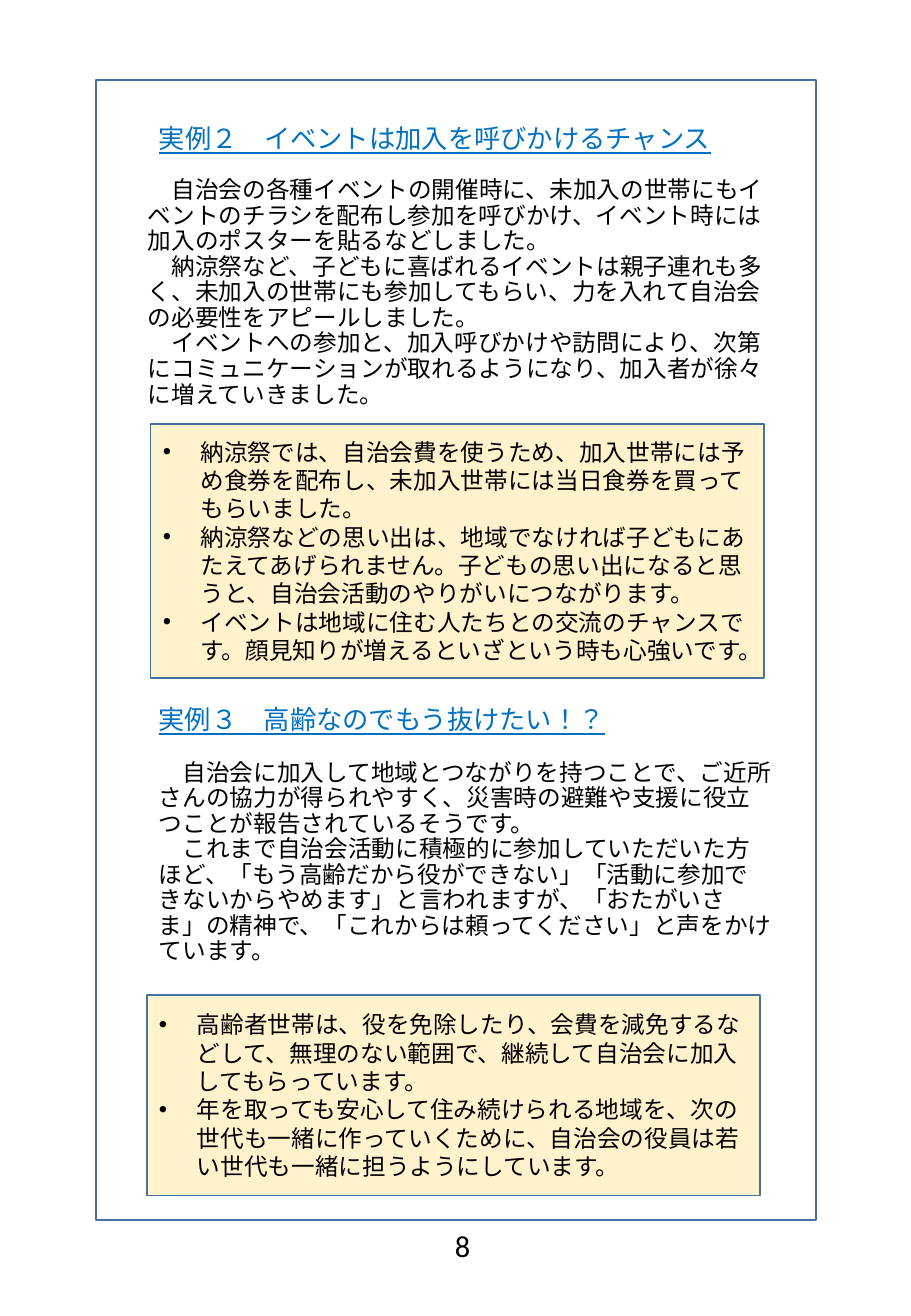
"""Build page 8: two neighbourhood association case studies."""
from lxml.etree import SubElement as Sub
from pptx import Presentation as Deck
from pptx.dml.color import RGBColor as Rgb
from pptx.enum.lang import MSO_LANGUAGE_ID as Lang
from pptx.enum.shapes import MSO_SHAPE as Kind
from pptx.enum.text import MSO_ANCHOR as Anchor, MSO_AUTO_SIZE as Fit, PP_ALIGN as Align
from pptx.oxml.ns import qn
from pptx.util import Cm, Pt

WHITE = Rgb(0xFF, 0xFF, 0xFF)
CREAM = Rgb(0xFF, 0xF2, 0xCC)
EDGE = Rgb(0x43, 0x73, 0x9E)
BLUE = Rgb(0x00, 0x70, 0xC0)
BLACK = Rgb(0x00, 0x00, 0x00)
SANS = "Noto Sans CJK JP"

HEAD_2 = "実例２　イベントは加入を呼びかけるチャンス"
HEAD_3 = "実例３　高齢なのでもう抜けたい！？"
STORY_2 = [
    "　自治会の各種イベントの開催時に、未加入の世帯にもイベントのチラシを配布し参加を呼びかけ、イベント時には加入のポスターを貼るなどしました。",
    "　納涼祭など、子どもに喜ばれるイベントは親子連れも多く、未加入の世帯にも参加してもらい、力を入れて自治会の必要性をアピールしました。",
    "　イベントへの参加と、加入呼びかけや訪問により、次第にコミュニケーションが取れるようになり、加入者が徐々に増えていきました。",
]
STORY_3 = [
    "　自治会に加入して地域とつながりを持つことで、ご近所さんの協力が得られやすく、災害時の避難や支援に役立つことが報告されているそうです。",
    "　これまで自治会活動に積極的に参加していただいた方ほど、「もう高齢だから役ができない」「活動に参加できないからやめます」と言われますが、「おたがいさま」の精神で、「これからは頼ってください」と声をかけています。",
]
TIPS_2 = [
    "納涼祭では、自治会費を使うため、加入世帯には予め食券を配布し、未加入世帯には当日食券を買ってもらいました。",
    "納涼祭などの思い出は、地域でなければ子どもにあたえてあげられません。子どもの思い出になると思うと、自治会活動のやりがいにつながります。",
    "イベントは地域に住む人たちとの交流のチャンスです。顔見知りが増えるといざという時も心強いです。",
]
TIPS_3 = [
    "高齢者世帯は、役を免除したり、会費を減免するなどして、無理のない範囲で、継続して自治会に加入してもらっています。",
    "年を取っても安心して住み続けられる地域を、次の世代も一緒に作っていくために、自治会の役員は若い世代も一緒に担うようにしています。",
]


def place(shape, left, top, width, height):
    shape.left, shape.top = Cm(left), Cm(top)
    shape.width, shape.height = Cm(width), Cm(height)


def paint(shape, color):
    shape.fill.solid()
    shape.fill.fore_color.rgb = color
    shape.line.color.rgb = EDGE
    shape.line.width = Pt(1)


def style(run, size, color=BLACK, name=SANS, under=False):
    font = run.font
    font.size, font.name = Pt(size), name
    font.bold, font.underline = False, under
    font.color.rgb = color
    font.language_id = Lang.JAPANESE
    Sub(font._element, qn("a:ea")).set("typeface", name)


def mark(par, bullet):
    props = par._p.get_or_add_pPr()
    indent = Cm(0.79) if bullet else 0
    props.set("marL", str(indent))
    props.set("indent", str(-indent))
    if bullet:
        Sub(props, qn("a:buFont")).set("typeface", "Arial")
        Sub(props, qn("a:buChar")).set("char", "•")
    else:
        Sub(props, qn("a:buNone"))


def write(shape, lines, anchor, gap=1.0, align=Align.LEFT, bullet=False, **look):
    frame = shape.text_frame
    frame.word_wrap, frame.auto_size = True, Fit.NONE
    frame.vertical_anchor = anchor
    for i, line in enumerate(lines):
        par = frame.add_paragraph() if i else frame.paragraphs[0]
        par.alignment, par.line_spacing = align, gap
        par.space_before = par.space_after = Pt(0)
        mark(par, bullet)
        run = par.add_run()
        run.text = line
        style(run, **look)


def add_frame(slide):
    frame = slide.shapes.add_shape(Kind.RECTANGLE, 0, 0, 0, 0)
    place(frame, 2.01, 1.68, 15.06, 23.83)
    paint(frame, WHITE)
    frame.shadow.inherit = False
    slide.shapes._spTree.insert(2, frame._element)


def set_head(shape, text, top):
    place(shape, 3.07, top, 13.72, 1.85)
    write(shape, [text], Anchor.TOP, 0.9, size=15.6, color=BLUE, under=True)


def set_story(shape, lines, *box):
    place(shape, *box)
    write(shape, lines, Anchor.BOTTOM, 0.9, size=14)


def set_tips(shape, lines, *box):
    place(shape, *box)
    paint(shape, CREAM)
    write(shape, lines, Anchor.MIDDLE, bullet=True, size=14)


def add_box(slide):
    return slide.shapes.add_textbox(0, 0, 0, 0)


def add_page(slide, number):
    box = add_box(slide)
    place(box, 8.71, 25.53, 1.93, 1.02)
    write(box, [number], Anchor.TOP, align=Align.CENTER, size=18, name="Calibri")


def main():
    deck = Deck()
    deck.slide_width, deck.slide_height = Cm(19.05), Cm(27.51)
    slide = deck.slides.add_slide(deck.slide_layouts.get_by_name("Comparison"))
    title, story_2, tips_2, story_3, tips_3 = slide.placeholders
    add_frame(slide)
    set_head(title, HEAD_2, 2.51)
    set_story(story_2, STORY_2, 2.84, 3.53, 13.39, 5.13)
    set_tips(tips_2, TIPS_2, 3.15, 8.86, 12.83, 5.31)
    set_head(add_box(slide), HEAD_3, 14.66)
    set_story(story_3, STORY_3, 3.07, 15.52, 13.34, 4.78)
    set_tips(tips_3, TIPS_3, 3.07, 20.8, 12.83, 4.19)
    add_page(slide, "8")
    deck.save("out.pptx")


if __name__ == "__main__":
    main()
